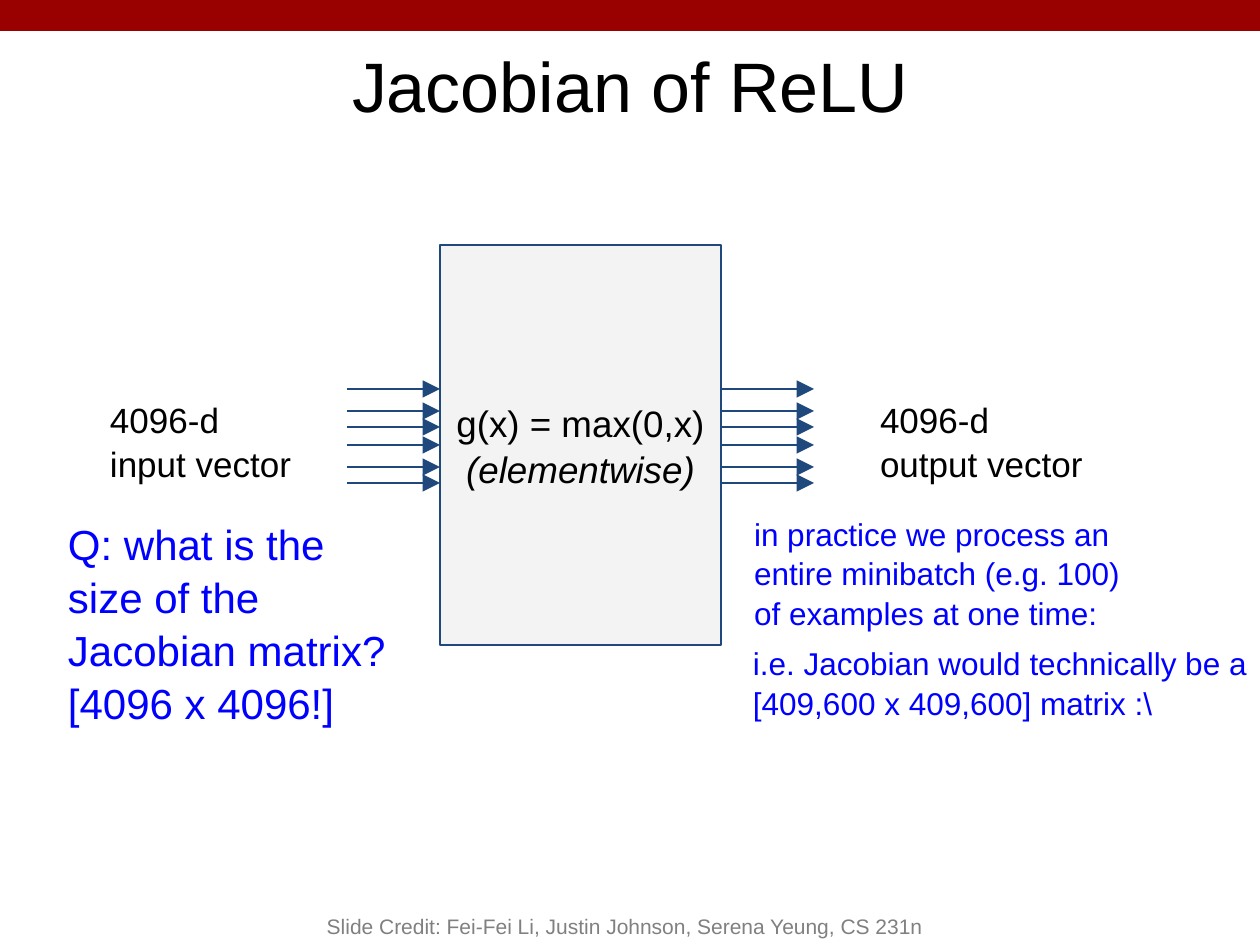
from lxml import etree
from pptx import Presentation
from pptx import util as u
from pptx.dml import color
from pptx.enum import shapes, text
from pptx.oxml import ns

PX_PER_INCH = 126
BLACK, BLUE, NAVY = "000000", "0000FF", "1F497D"
ARROW_OFFSETS = [group + step for group in (0, 56) for step in (0, 22, 38)]


def px(length):
    """Turn pixels into EMU."""
    return u.Emu(round(length * 914400 / PX_PER_INCH))


def rgb(value):
    """Turn a hex string into a colour."""
    return color.RGBColor.from_string(value)


def write(shape, lines, size, hue, inset=13, spacing=1.05,
          align=text.PP_ALIGN.LEFT, anchor=text.MSO_ANCHOR.TOP):
    """Fill a shape with one paragraph per line in a single style."""
    frame = shape.text_frame
    frame.text = "\n".join(lines)
    frame.word_wrap = True
    frame.vertical_anchor = anchor
    frame.margin_left = frame.margin_right = px(inset)
    frame.margin_top = frame.margin_bottom = px(min(inset, 13) if inset == 13 else 6)
    for paragraph in frame.paragraphs:
        paragraph.alignment = align
        paragraph.line_spacing = spacing
        for run in paragraph.runs:
            run.font.size = u.Pt(size)
            run.font.name = "Arial"
            run.font.color.rgb = rgb(hue)


def add_text(slide, box, lines, size, hue, **style):
    """Add a text box at the given box."""
    shape = slide.shapes.add_textbox(*map(px, box))
    write(shape, lines, size, hue, **style)


def add_rectangle(slide, box, fill, line=None):
    """Add a flat rectangle with an optional outline."""
    shape = slide.shapes.add_shape(shapes.MSO_SHAPE.RECTANGLE, *map(px, box))
    shape.shadow.inherit = False
    shape.fill.solid()
    shape.fill.fore_color.rgb = rgb(fill)
    if line:
        shape.line.color.rgb = rgb(line)
        shape.line.width = u.Pt(0.75)
    else:
        shape.line.fill.background()
    return shape


def add_arrow(slide, left, right, y):
    """Add a horizontal arrow pointing right."""
    arrow = slide.shapes.add_connector(
        shapes.MSO_CONNECTOR.STRAIGHT, px(left), px(y), px(right), px(y))
    arrow.line.color.rgb = rgb(NAVY)
    arrow.line.width = u.Pt(0.75)
    etree.SubElement(arrow.line._get_or_add_ln(), ns.qn("a:tailEnd"),
                     type="triangle", w="lg", len="lg")
    etree.SubElement(arrow._element.spPr, ns.qn("a:effectLst"))
    return arrow


def add_header(slide, box):
    """Add the red bar and the title beneath it."""
    left, top, width, height = box
    add_rectangle(slide, (left, top, width, 31), "990000")
    add_text(slide, (left + 43, top + 31, width - 86, height - 31),
             ["Jacobian of ReLU"], 40, BLACK, spacing=1.0,
             align=text.PP_ALIGN.CENTER, anchor=text.MSO_ANCHOR.MIDDLE)


def add_gate(slide, box, arrow_length=93):
    """Add the function box with its input and output arrows."""
    left, top, width, height = box
    right, middle = left + width, top + height // 2
    gate = add_rectangle(slide, box, "F3F3F3", NAVY)
    write(gate, ["g(x) = max(0,x)", "(elementwise)"], 21, BLACK,
          align=text.PP_ALIGN.CENTER, anchor=text.MSO_ANCHOR.MIDDLE)
    gate.text_frame.paragraphs[1].runs[0].font.italic = True
    for offset in ARROW_OFFSETS:
        y = middle - 56 + offset
        incoming = add_arrow(slide, left - arrow_length, left, y)
        outgoing = add_arrow(slide, right, right + arrow_length, y)
        if y == middle:
            incoming.end_connect(gate, 1)
            outgoing.begin_connect(gate, 3)


def add_input_notes(slide, box):
    """Add the input label and the question below it."""
    left, top, width, height = box
    add_text(slide, (left + 42, top, width - 42, 64),
             ["4096-d", "input vector"], 20, BLACK)
    add_text(slide, (left, top + 120, 353, height - 120),
             ["Q: what is the size of the Jacobian matrix?", "[4096 x 4096!]"],
             24, BLUE)


def add_output_notes(slide, box):
    """Add the output label and the minibatch remarks below it."""
    left, top, width, height = box
    add_text(slide, (left + 127, top, 260, 64),
             ["4096-d", "output vector"], 20, BLACK)
    add_text(slide, (left + 1, top + 117, 410, 89),
             ["in practice we process an entire minibatch (e.g. 100) "
              "of examples at one time:"], 18, BLUE)
    add_text(slide, (left, top + 246, width, height - 246),
             ["i.e. Jacobian would technically be a",
              "[409,600 x 409,600] matrix :\\"], 18, BLUE)


def add_credit(slide, box):
    """Add the credit line at the foot of the slide."""
    add_text(slide, box,
             ["Slide Credit: Fei-Fei Li, Justin Johnson, Serena Yeung, CS 231n"],
             12, "808080", inset=12, spacing=1.0,
             align=text.PP_ALIGN.CENTER, anchor=text.MSO_ANCHOR.BOTTOM)


def main():
    """Build the slide and save it."""
    presentation = Presentation()
    presentation.slide_width, presentation.slide_height = px(1260), px(945)
    slide = presentation.slides.add_slide(presentation.slide_layouts[6])
    add_header(slide, (0, 0, 1260, 137))
    add_gate(slide, (440, 245, 281, 400))
    add_input_notes(slide, (55, 383, 377, 279))
    add_output_notes(slide, (740, 383, 520, 347))
    add_credit(slide, (252, 882, 746, 63))
    presentation.save("out.pptx")


if __name__ == "__main__":
    main()
